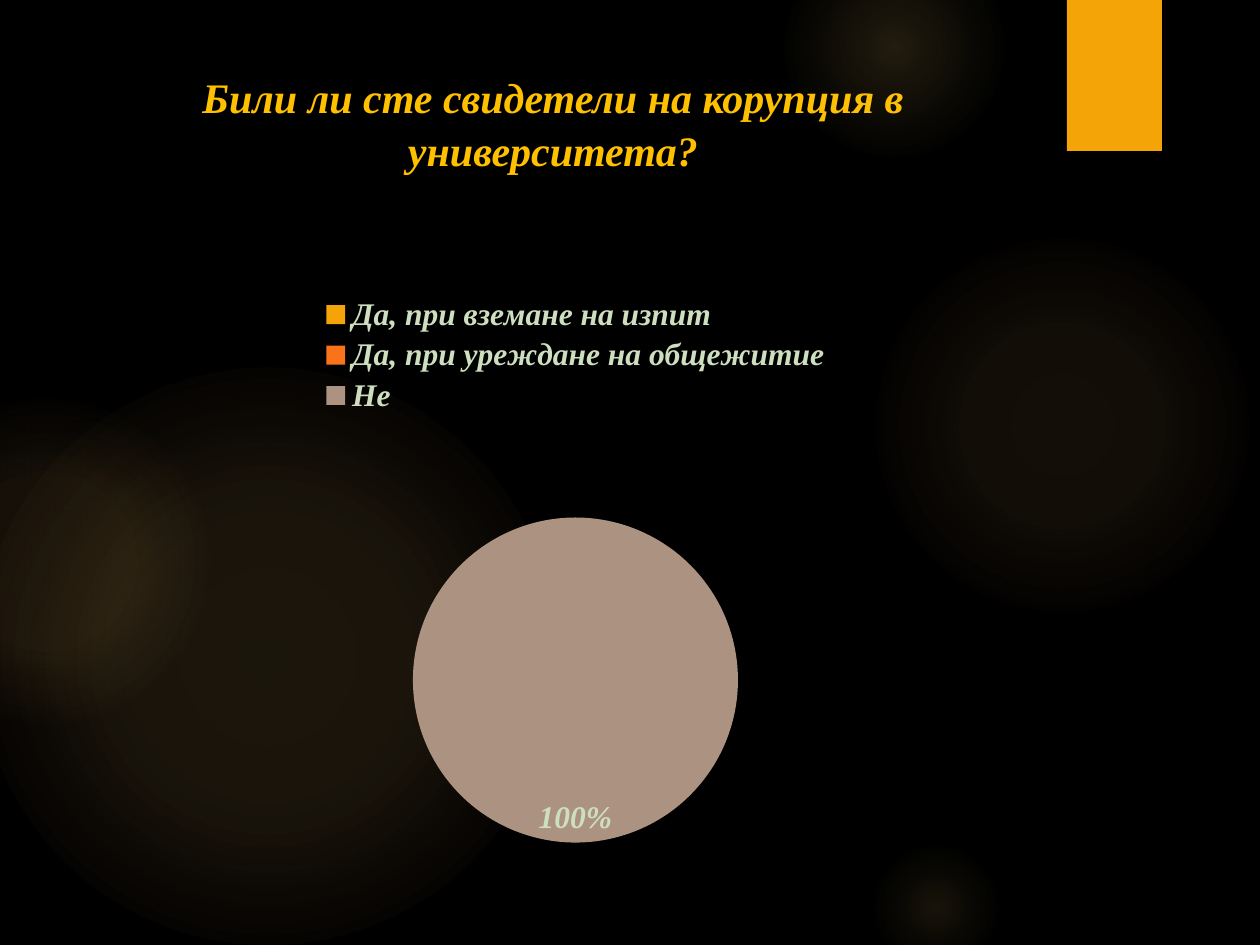
from lxml import etree
from pptx import Presentation
from pptx import util as u
from pptx.chart.data import CategoryChartData
from pptx.dml.color import RGBColor
from pptx.enum import chart as ch, shapes, text
from pptx.oxml import parse_xml
from pptx.oxml.ns import nsdecls, qn

PX = 914400 / 126
HEX = {"night": "000000", "glow": "FAC96A", "gold": "F5A408", "title": "FFC000",
       "label": "CDDFBF", "white": "FFFFFF", "fire": "FA731A", "clay": "AB9281"}
GLOWS = [
    (868, 231, 388, [(0, 7), (36, 6), (69, 0)]),
    (784, -63, 220, [(0, 14), (36, 7), (73, 0)]),
    (868, 840, 136, [(0, 10), (31, 5), (66, 0)]),
    (-21, 368, 577, [(0, 11), (36, 10), (75, 0)]),
    (-116, 399, 325, [(0, 8), (36, 8), (72, 0)]),
]
SLICES = [("Да, при вземане на изпит", 0, "gold"),
          ("Да, при уреждане на общежитие", 0, "fire"),
          ("Не", 100, "clay")]


def px(*vals):
    return [u.Emu(round(v * PX)) for v in vals]


def rgb(name):
    return RGBColor.from_string(HEX[name])


def style(obj, **vals):
    for key, val in vals.items():
        setattr(obj, key, val)


def paint(font, size, color, face="Times New Roman", bold=True, italic=True):
    style(font, size=u.Pt(size), name=face, bold=bold, italic=italic)
    font.color.rgb = rgb(color)


def block(slide, kind, box, color):
    shape = slide.shapes.add_shape(kind, *px(*box))
    shape.shadow.inherit = False
    shape.fill.solid()
    shape.fill.fore_color.rgb = rgb(color)
    shape.line.fill.background()
    return shape


def glow(slide, left, top, size, stops):
    shape = block(slide, shapes.MSO_SHAPE.OVAL, (left, top, size, size), "glow")
    marks = "".join(
        f'<a:gs pos="{pos * 1000}"><a:srgbClr val="{HEX["glow"]}">'
        f'<a:alpha val="{alpha * 1000}"/></a:srgbClr></a:gs>' for pos, alpha in stops)
    grad = parse_xml(
        f'<a:gradFill {nsdecls("a")} rotWithShape="1"><a:gsLst>{marks}</a:gsLst>'
        '<a:path path="circle"><a:fillToRect l="50000" t="50000" r="50000" b="50000"/>'
        '</a:path></a:gradFill>')
    props = shape.element.spPr
    props.replace(props.find(qn("a:solidFill")), grad)


def title(slide, words, box):
    shape = slide.shapes.title
    style(shape, **dict(zip(("left", "top", "width", "height"), px(*box))))
    frame = shape.text_frame
    style(frame, text=words, word_wrap=True, auto_size=text.MSO_AUTO_SIZE.NONE,
          vertical_anchor=text.MSO_ANCHOR.TOP)
    para = frame.paragraphs[0]
    style(para, alignment=text.PP_ALIGN.CENTER, line_spacing=1.05)
    paint(para.runs[0].font, 24, "title")


def pie(slide, box):
    data = CategoryChartData()
    data.categories = [name for name, _, _ in SLICES]
    data.add_series("Series 1", [val for _, val, _ in SLICES])
    chart = slide.shapes.add_chart(ch.XL_CHART_TYPE.PIE, *px(*box), data).chart
    style(chart, has_title=False, has_legend=True)
    paint(chart.font, 18, "white", "League Spartan", False, False)
    style(chart.legend, position=ch.XL_LEGEND_POSITION.TOP, include_in_layout=False)
    paint(chart.legend.font, 18, "label")
    plot = chart.plots[0]
    style(plot, vary_by_categories=True)
    series = plot.series[0]
    burst = etree.Element(qn("c:explosion"), val="25")
    series._element.find(qn("c:tx")).addnext(burst)
    for idx, (_, _, color) in enumerate(SLICES):
        form = series.points[idx].format
        form.fill.solid()
        form.fill.fore_color.rgb = rgb(color)
        form.line.fill.background()
    labels = series.data_labels
    style(labels, show_percentage=True, show_value=False, number_format="0%",
          number_format_is_linked=False, position=ch.XL_LABEL_POSITION.INSIDE_END)
    paint(labels.font, 18, "label")


def main():
    deck = Presentation()
    style(deck, slide_width=u.Inches(10), slide_height=u.Inches(7.5))
    slide = deck.slides.add_slide(deck.slide_layouts[5])
    back = slide.background.fill
    back.solid()
    back.fore_color.rgb = rgb("night")
    for item in GLOWS:
        glow(slide, *item)
    block(slide, shapes.MSO_SHAPE.RECTANGLE, (1067, 0, 95, 151), "gold")
    title(slide, "Били ли сте свидетели на корупция в университета?", (67, 63, 972, 193))
    pie(slide, (113, 282, 925, 578))
    deck.save("out.pptx")


if __name__ == "__main__":
    main()
